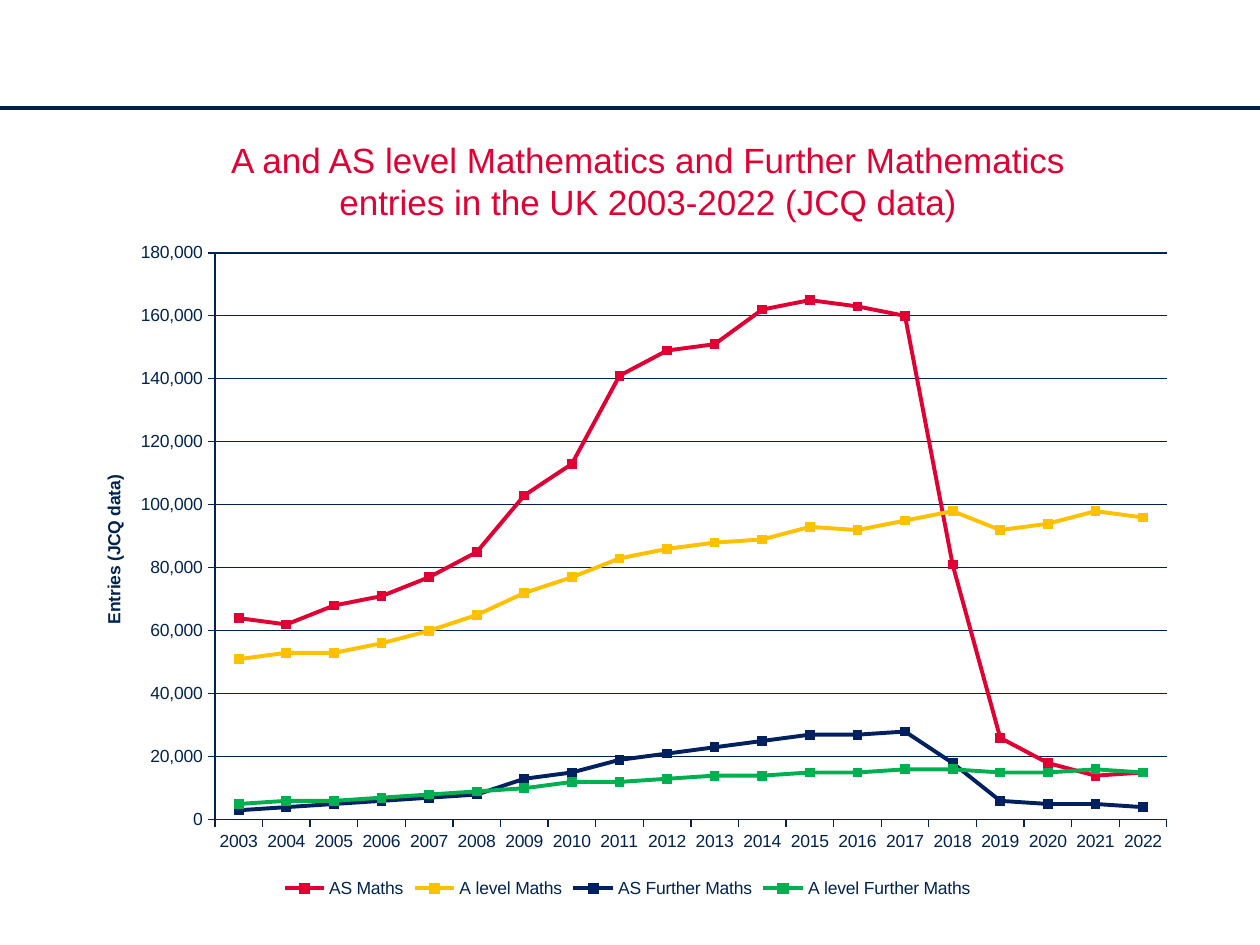
import pptx
import pptx.chart.data
import pptx.dml.color
import pptx.enum.chart
import pptx.enum.shapes
import pptx.enum.text
import pptx.oxml
import pptx.oxml.ns
import pptx.util
from pptx.util import Inches

COLORS = {"red": "E00034", "amber": "FFC000", "navy": "002060",
          "green": "00B050", "ink": "002350", "rule": "002147", "white": "FFFFFF"}
FONT = "Arial"
YEARS = [str(year) for year in range(2003, 2023)]
ENTRIES_IN_THOUSANDS = [
    ("AS Maths", "red", [64, 62, 68, 71, 77, 85, 103, 113, 141, 149,
                         151, 162, 165, 163, 160, 81, 26, 18, 14, 15]),
    ("A level Maths", "amber", [51, 53, 53, 56, 60, 65, 72, 77, 83, 86,
                                88, 89, 93, 92, 95, 98, 92, 94, 98, 96]),
    ("AS Further Maths", "navy", [3, 4, 5, 6, 7, 8, 13, 15, 19, 21,
                                  23, 25, 27, 27, 28, 18, 6, 5, 5, 4]),
    ("A level Further Maths", "green", [5, 6, 6, 7, 8, 9, 10, 12, 12, 13,
                                        14, 14, 15, 15, 16, 16, 15, 15, 16, 15]),
]


def rgb(name):
    """Return the named colour."""
    return pptx.dml.color.RGBColor.from_string(COLORS[name])


def style_font(font, size, color, bold=False):
    """Set typeface, size, colour and weight."""
    font.name, font.size, font.bold = FONT, pptx.util.Pt(size), bold
    font.color.rgb = rgb(color)


def style_line(line, color, width):
    """Set line colour and width in points."""
    line.color.rgb = rgb(color)
    line.width = pptx.util.Pt(width)


def set_layout(parent, index, target=None, **fractions):
    """Place a chart part by fractions of the chart area."""
    qn = pptx.oxml.ns.qn
    for old in parent.findall(qn("c:layout")):
        parent.remove(old)
    inner = f'<c:layoutTarget val="{target}"/>' if target else ""
    inner += "".join(f'<c:{k}Mode val="edge"/>' for k in ("x", "y"))
    inner += "".join(f'<c:{k} val="{v}"/>' for k, v in fractions.items())
    parent.insert(index, pptx.oxml.parse_xml(
        f'<c:layout {pptx.oxml.ns.nsdecls("c")}>'
        f"<c:manualLayout>{inner}</c:manualLayout></c:layout>"))


def add_header_rule(s, x, y, width):
    """Draw the rule across the top of the slide."""
    cx = s.shapes.add_connector(
        pptx.enum.shapes.MSO_CONNECTOR.STRAIGHT, x, y, x + width, y)
    style_line(cx.line, "rule", 2.25)
    props = cx._element.spPr
    props.append(props.makeelement(pptx.oxml.ns.qn("a:effectLst"), {}))


def add_heading(s, x, y, width, height):
    """Write the centred heading."""
    tf = s.shapes.add_textbox(x, y, width, height).text_frame
    tf.word_wrap = True
    p = tf.paragraphs[0]
    p.alignment = pptx.enum.text.PP_ALIGN.CENTER
    r = p.add_run()
    r.text = ("A and AS level Mathematics and Further Mathematics "
              "entries in the UK 2003-2022 (JCQ data)")
    style_font(r.font, 20, "red")


def style_axes(chart):
    """Format both axes, the gridlines and the value title."""
    for axis in (chart.category_axis, chart.value_axis):
        style_font(axis.tick_labels.font, 10, "ink")
        style_line(axis.format.line, "ink", 0.75)
        axis.major_tick_mark = pptx.enum.chart.XL_TICK_MARK.OUTSIDE
    axis = chart.value_axis
    axis.minimum_scale, axis.maximum_scale, axis.major_unit = 0, 180000, 20000
    axis.tick_labels.number_format = "#,##0"
    axis.tick_labels.number_format_is_linked = False
    axis.has_major_gridlines = True
    style_line(axis.major_gridlines.format.line, "ink", 0.75)
    r = axis.axis_title.text_frame.paragraphs[0].add_run()
    r.text = "Entries (JCQ data)"
    style_font(r.font, 10, "ink", True)
    set_layout(axis.axis_title._element, 1, x=0.03, y=0.36)


def style_series(series, color):
    """Format one line and its square markers."""
    series.smooth = False
    style_line(series.format.line, color, 2.25)
    marker = series.marker
    marker.style = pptx.enum.chart.XL_MARKER_STYLE.SQUARE
    marker.size = 5
    marker.format.fill.solid()
    marker.format.fill.fore_color.rgb = rgb(color)
    style_line(marker.format.line, color, 0.75)


def add_entries_chart(s, x, y, width, height):
    """Plot the yearly entries for each qualification."""
    data = pptx.chart.data.CategoryChartData(number_format="#,##0")
    data.categories = YEARS
    for name, _, values in ENTRIES_IN_THOUSANDS:
        data.add_series(name, [v * 1000 for v in values])
    chart = s.shapes.add_chart(pptx.enum.chart.XL_CHART_TYPE.LINE_MARKERS,
                               x, y, width, height, data).chart
    style_font(chart.font, 10, "red")
    chart.has_title = False
    chart.has_legend = True
    chart.legend.position = pptx.enum.chart.XL_LEGEND_POSITION.BOTTOM
    chart.legend.include_in_layout = False
    style_font(chart.legend.font, 10, "ink")
    style_axes(chart)
    plot = chart.plots[0]
    plot.vary_by_categories = False
    for series, (_, color, _) in zip(plot.series, ENTRIES_IN_THOUSANDS):
        style_series(series, color)
    set_layout(chart._chartSpace.chart.plotArea, 0, "inner",
               x=0.133, y=0.035, w=0.847, h=0.841)


def main():
    """Build and save the slide."""
    prs = pptx.Presentation()
    prs.slide_width, prs.slide_height = Inches(10), Inches(7.5)
    s = prs.slides.add_slide(prs.slide_layouts[6])
    s.background.fill.solid()
    s.background.fill.fore_color.rgb = rgb("white")
    add_header_rule(s, Inches(0), Inches(0.86), prs.slide_width)
    add_heading(s, Inches(1.44), Inches(1.05), Inches(7.41), Inches(0.77))
    add_entries_chart(s, Inches(0.52), Inches(1.82), Inches(8.92), Inches(5.35))
    prs.save("out.pptx")


if __name__ == "__main__":
    main()
